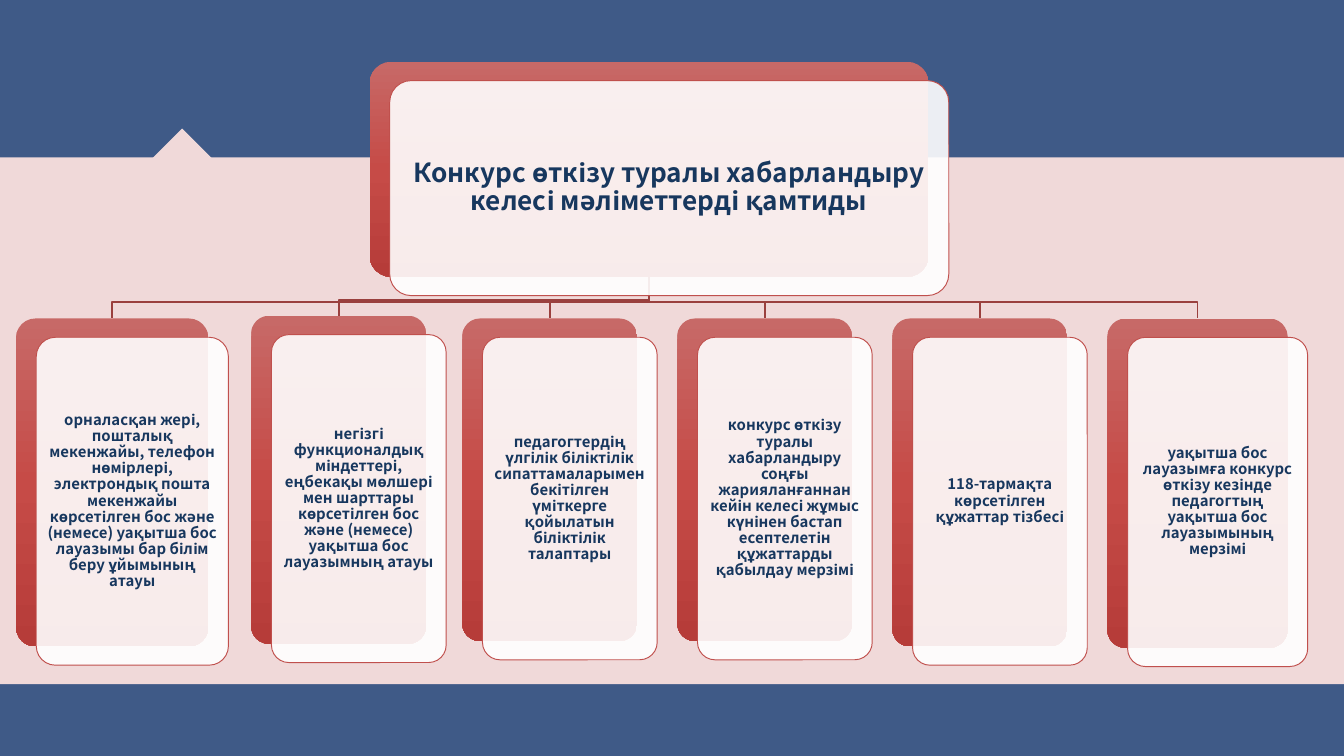
from copy import deepcopy
from dataclasses import dataclass

from pptx import Presentation
from pptx.dml.color import RGBColor
from pptx.enum.shapes import MSO_SHAPE
from pptx.enum.text import MSO_ANCHOR, PP_ALIGN
from pptx.oxml.ns import qn
from pptx.util import Inches, Pt

RECT = MSO_SHAPE.RECTANGLE
ROUNDED = MSO_SHAPE.ROUNDED_RECTANGLE
RIGHT_TRIANGLE = MSO_SHAPE.RIGHT_TRIANGLE
MIDDLE = MSO_ANCHOR.MIDDLE
CENTER = PP_ALIGN.CENTER


@dataclass(frozen=True)
class Theme:
    navy: str = "3F5A87"
    blush: str = "F0D9D9"
    white: str = "FFFFFF"
    link: str = "9A403E"
    outline: str = "C0504D"
    ink: str = "17375E"
    reds: tuple = ((0, "C76967"), (0.5, "C64B47"), (1, "B63C39"))
    font: str = "Noto Sans CJK SC"
    title_size: int = 14
    item_size: int = 8


THEME = Theme()
CARD_SHIFT_X, CARD_SHIFT_Y = 0.15, 0.14
LINK_DROP = 0.12

TITLE = "Конкурс өткізу туралы хабарландыру келесі мәліметтерді қамтиды"
TITLE_BOX = (2.75, 0.46, 4.16, 1.6)
ITEMS = (
    ((0.12, 2.37, 1.43, 2.44),
     "орналасқан жері, пошталық мекенжайы, телефон нөмірлері, электрондық "
     "пошта мекенжайы көрсетілген бос және (немесе) уақытша бос лауазымы "
     "бар білім беру ұйымының атауы"),
    ((1.87, 2.35, 1.3, 2.44),
     "негізгі функционалдық міндеттері, еңбекақы мөлшері мен шарттары "
     "көрсетілген бос және (немесе) уақытша бос лауазымның атауы"),
    ((3.44, 2.37, 1.3, 2.4),
     "педагогтердің үлгілік біліктілік сипаттамаларымен бекітілген "
     "үміткерге қойылатын біліктілік талаптары"),
    ((5.04, 2.37, 1.3, 2.4),
     "конкурс өткізу туралы хабарландыру соңғы жарияланғаннан кейін келесі "
     "жұмыс күнінен бастап есептелетін құжаттарды қабылдау мерзімі"),
    ((6.64, 2.37, 1.3, 2.44),
     "118-тармақта көрсетілген құжаттар тізбесі"),
    ((8.24, 2.37, 1.34, 2.45),
     "уақытша бос лауазымға конкурс өткізу кезінде педагогтың уақытша бос "
     "лауазымының мерзімі"),
)


def rgb(value):
    return RGBColor.from_string(value)


def add_plain_shape(s, kind, box, color=None):
    sp = s.shapes.add_shape(kind, *map(Inches, box))
    sp.shadow.inherit = False
    sp.line.fill.background()
    if color:
        sp.fill.solid()
        sp.fill.fore_color.rgb = rgb(color)
    return sp


def fill_gradient(sp, stops):
    """Fill from top to bottom with three colour stops."""
    sp.fill.gradient()
    sp.fill.gradient_angle = 270
    stop_list = sp._element.spPr.find(".//" + qn("a:gsLst"))
    stop_list.append(deepcopy(stop_list[0]))
    for stop, (position, color) in zip(sp.fill.gradient_stops, stops):
        stop.position = position
        stop.color.rgb = rgb(color)


def set_opacity(sp, percent):
    color = sp._element.spPr.find(qn("a:solidFill"))[0]
    alpha = color.makeelement(qn("a:alpha"), {"val": str(percent * 1000)})
    color.append(alpha)


def add_text(sp, text, size, inset):
    tf = sp.text_frame
    tf.word_wrap = True
    tf.vertical_anchor = MIDDLE
    tf.margin_left = tf.margin_right = Inches(inset)
    tf.margin_top = tf.margin_bottom = Inches(inset)
    p = tf.paragraphs[0]
    p.text = text
    p.alignment = CENTER
    p.line_spacing = 0.9
    p.font.name = THEME.font
    p.font.size = Pt(size)
    p.font.bold = True
    p.font.color.rgb = rgb(THEME.ink)


def add_card(s, box, text, size, inset):
    """Add a red backing and, shifted over it, a translucent text panel."""
    left, top, width, height = box
    back = add_plain_shape(s, ROUNDED, box)
    back.adjustments[0] = 0.1
    fill_gradient(back, THEME.reds)

    front_box = (left + CARD_SHIFT_X, top + CARD_SHIFT_Y, width, height)
    front = add_plain_shape(s, ROUNDED, front_box, THEME.white)
    front.adjustments[0] = 0.1
    set_opacity(front, 90)
    front.line.color.rgb = rgb(THEME.outline)
    front.line.width = Pt(0.5)
    add_text(front, text, size, inset)


def add_link(s, parent, child):
    """Draw a stepped line from the parent's bottom to the child's top."""
    x1, y1 = parent[0] + parent[2] / 2, parent[1] + parent[3]
    x2, y2 = child[0] + child[2] / 2, child[1]
    bend = y2 - LINK_DROP
    builder = s.shapes.build_freeform(Inches(x1), Inches(y1))
    builder.add_line_segments(
        [(Inches(x), Inches(y)) for x, y in ((x1, bend), (x2, bend), (x2, y2))],
        close=False,
    )
    sp = builder.convert_to_shape()
    sp.shadow.inherit = False
    sp.fill.background()
    sp.line.color.rgb = rgb(THEME.link)
    sp.line.width = Pt(1)


def add_backdrop(s, width, height):
    page = add_plain_shape(s, RECT, (0, 0, 10, 5.62), THEME.navy)
    page.width, page.height = width, height
    add_plain_shape(s, RECT, (0, 1.17, 10, 3.92), THEME.blush)
    notch = add_plain_shape(s, RIGHT_TRIANGLE, (1.2, 1.02, 0.31, 0.31), THEME.blush)
    notch.rotation = 135


def main():
    prs = Presentation()
    prs.slide_width = Inches(10)
    prs.slide_height = prs.slide_width * 9 // 16
    s = prs.slides.add_slide(prs.slide_layouts[6])
    add_backdrop(s, prs.slide_width, prs.slide_height)
    for box, _ in reversed(ITEMS):
        add_link(s, TITLE_BOX, box)
    add_card(s, TITLE_BOX, TITLE, THEME.title_size, 0.06)
    for box, text in ITEMS:
        add_card(s, box, text, THEME.item_size, 0.03)
    prs.save("out.pptx")


if __name__ == "__main__":
    main()
